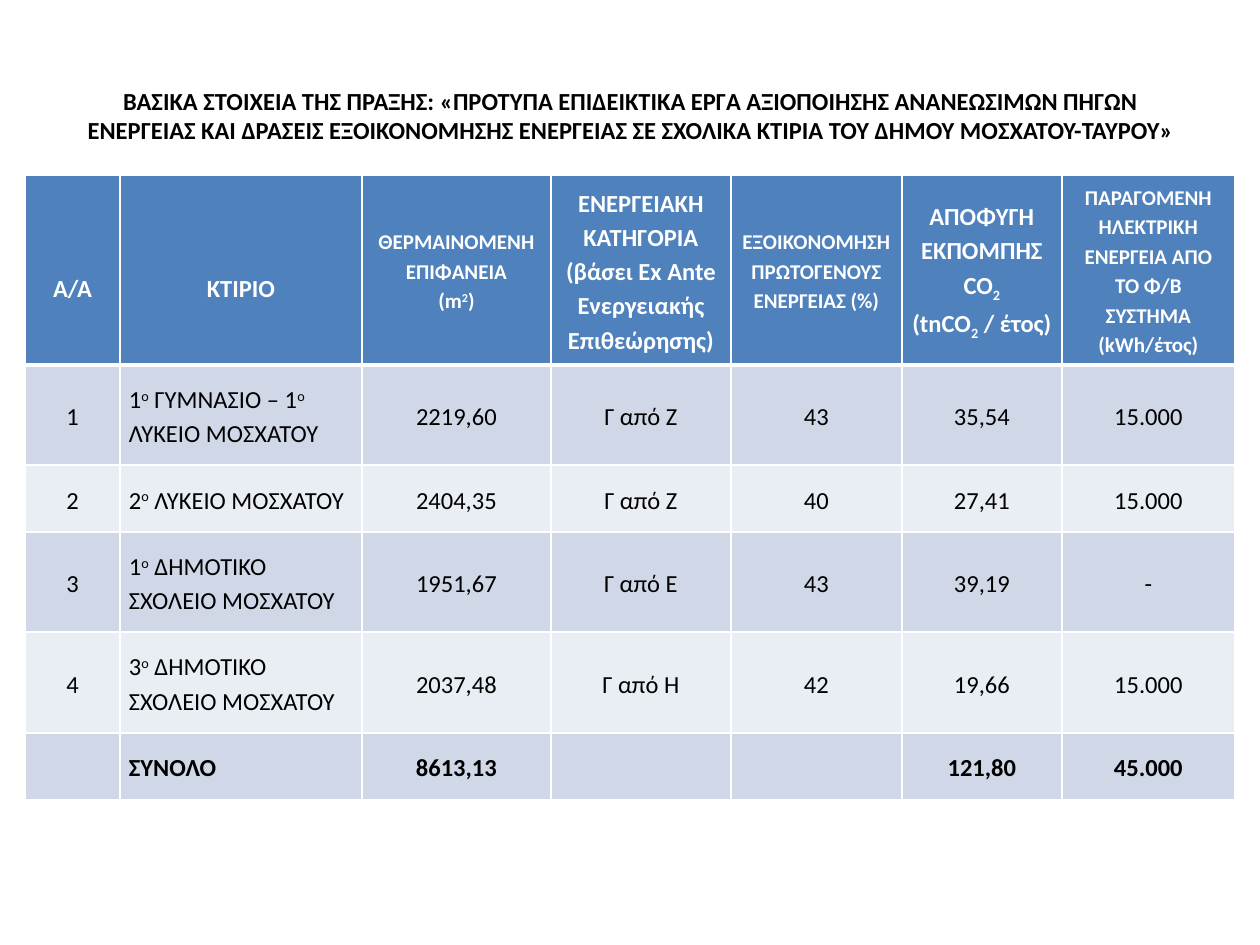
from lxml.etree import SubElement
from pptx import Presentation
from pptx.dml.color import RGBColor
from pptx.enum.text import MSO_ANCHOR, MSO_AUTO_SIZE, PP_ALIGN
from pptx.oxml.ns import qn
from pptx.util import Pt

PX = 914400 // 126
COLORS = {"header": "4F81BD", "odd": "D0D8E8", "even": "E9EDF4",
          "white": "FFFFFF", "black": "000000"}
COLUMNS = [95, 242, 189, 180, 171, 160, 173]
ROWS = [190, 100, 67, 100, 101, 67]
HEADER_SIZES = [14, 14, 12, 14, 12, 14, 12]
BASELINES = {"^": 30000, "_": -25000}

# "|" separates runs; a run that begins with ^ is raised, with _ lowered.
CELLS = [
    ["Α/Α", "ΚΤΙΡΙΟ", "ΘΕΡΜΑΙΝΟΜΕΝΗ ΕΠΙΦΑΝΕΙΑ\n(m|^2|)",
     "ΕΝΕΡΓΕΙΑΚΗ ΚΑΤΗΓΟΡΙΑ (βάσει Ex Ante Ενεργειακής Επιθεώρησης)",
     "ΕΞΟΙΚΟΝΟΜΗΣΗ ΠΡΩΤΟΓΕΝΟΥΣ ΕΝΕΡΓΕΙΑΣ (%)",
     "ΑΠΟΦΥΓΗ ΕΚΠΟΜΠΗΣ CO|_2\n(tnCO|_2| / έτος)",
     "ΠΑΡΑΓΟΜΕΝΗ ΗΛΕΚΤΡΙΚΗ ΕΝΕΡΓΕΙΑ ΑΠΟ ΤΟ Φ/Β ΣΥΣΤΗΜΑ (kWh/έτος)"],
    ["1", "1|^ο| ΓΥΜΝΑΣΙΟ – 1|^ο| ΛΥΚΕΙΟ ΜΟΣΧΑΤΟΥ", "2219,60", "Γ από Ζ", "43", "35,54", "15.000"],
    ["2", "2|^ο| ΛΥΚΕΙΟ ΜΟΣΧΑΤΟΥ", "2404,35", "Γ από Ζ", "40", "27,41", "15.000"],
    ["3", "1|^ο| ΔΗΜΟΤΙΚΟ ΣΧΟΛΕΙΟ ΜΟΣΧΑΤΟΥ", "1951,67", "Γ από Ε", "43", "39,19", "-"],
    ["4", "3|^ο| ΔΗΜΟΤΙΚΟ ΣΧΟΛΕΙΟ ΜΟΣΧΑΤΟΥ", "2037,48", "Γ από Η", "42", "19,66", "15.000"],
    ["", "ΣΥΝΟΛΟ", "8613,13", "", "", "121,80", "45.000"],
]


def set_borders(cell, top, bottom):
    """Draw white cell borders; top and bottom are widths in points."""
    properties = cell._tc.get_or_add_tcPr()
    for side, width in (("L", 1), ("R", 1), ("T", top), ("B", bottom)):
        line = SubElement(properties, qn(f"a:ln{side}"), w=str(Pt(width)))
        fill = SubElement(line, qn("a:solidFill"))
        SubElement(fill, qn("a:srgbClr"), val=COLORS["white"])


def style_font(font, size, bold, color):
    font.name = "Calibri"
    font.size = Pt(size)
    font.bold = bold
    font.color.rgb = RGBColor.from_string(COLORS[color])


deck = Presentation()
deck.slide_width, deck.slide_height = 1260 * PX, 945 * PX
page = deck.slides.add_slide(deck.slide_layouts[5])

title = page.shapes.title
title.left, title.top, title.width, title.height = 64 * PX, 66 * PX, 1134 * PX, 98 * PX
frame = title.text_frame
frame.text = ("ΒΑΣΙΚΑ ΣΤΟΙΧΕΙΑ ΤΗΣ ΠΡΑΞΗΣ: «ΠΡΟΤΥΠΑ ΕΠΙΔΕΙΚΤΙΚΑ ΕΡΓΑ ΑΞΙΟΠΟΙΗΣΗΣ "
              "ΑΝΑΝΕΩΣΙΜΩΝ ΠΗΓΩΝ ΕΝΕΡΓΕΙΑΣ ΚΑΙ ΔΡΑΣΕΙΣ ΕΞΟΙΚΟΝΟΜΗΣΗΣ ΕΝΕΡΓΕΙΑΣ "
              "ΣΕ ΣΧΟΛΙΚΑ ΚΤΙΡΙΑ ΤΟΥ ΔΗΜΟΥ ΜΟΣΧΑΤΟΥ-ΤΑΥΡΟΥ»")
frame.word_wrap = True
frame.auto_size = MSO_AUTO_SIZE.NONE
frame.vertical_anchor = MSO_ANCHOR.MIDDLE
frame.paragraphs[0].alignment = PP_ALIGN.CENTER
style_font(frame.paragraphs[0].runs[0].font, 14, True, "black")

table = page.shapes.add_table(len(ROWS), len(COLUMNS), 25 * PX, 175 * PX,
                              sum(COLUMNS) * PX, sum(ROWS) * PX).table
for column, width in zip(table.columns, COLUMNS):
    column.width = width * PX
for row, height in zip(table.rows, ROWS):
    row.height = height * PX

for r, texts in enumerate(CELLS):
    header = r == 0
    bold = header or r == len(CELLS) - 1
    band = "header" if header else "odd" if r % 2 else "even"
    for c, text in enumerate(texts):
        cell = table.cell(r, c)
        set_borders(cell, 3 if r == 1 else 1, 3 if header else 1)
        cell.fill.solid()
        cell.fill.fore_color.rgb = RGBColor.from_string(COLORS[band])
        cell.vertical_anchor = MSO_ANCHOR.MIDDLE
        cell.margin_left = cell.margin_right = 9 * PX
        # The two short headings sit one line lower.
        cell.margin_top = 34 * PX if header and c < 2 else 0
        cell.margin_bottom = 0
        cell.text_frame.text = text.replace("|", "")
        for para, line in zip(cell.text_frame.paragraphs, text.split("\n")):
            para.text = ""
            para.line_spacing = 1.15
            para.alignment = PP_ALIGN.LEFT if c == 1 and not header else PP_ALIGN.CENTER
            for part in filter(None, line.split("|")):
                span = para.add_run()
                span.text = part.lstrip("^_")
                style_font(span.font, HEADER_SIZES[c] if header else 14, bold,
                           "white" if header else "black")
                if part[0] in BASELINES:
                    span.font._element.set("baseline", str(BASELINES[part[0]]))

deck.save("out.pptx")
